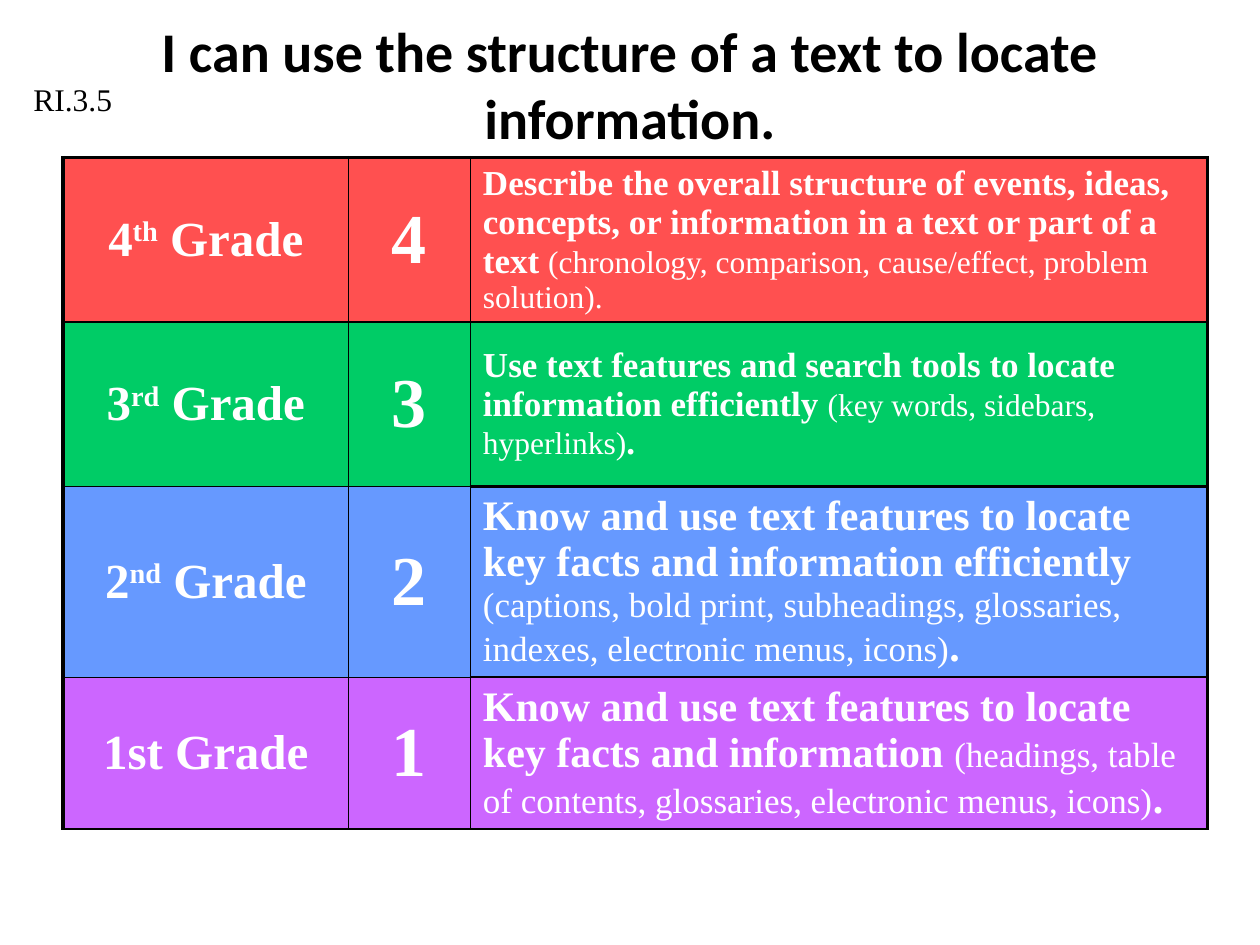
from lxml import etree
from pptx import Presentation
from pptx.dml.color import RGBColor
from pptx.enum import text
from pptx.oxml import ns
from pptx.util import Pt

COLORS = {"ink": "000000", "paper": "FFFFFF", "4th": "FF5050", "3rd": "00CC66",
          "2nd": "6699FF", "1st": "CC66FF"}
SERIF = "Times New Roman"


def add_text(paragraph, words, size, font=SERIF, color="paper", bold=False, raised=False):
    run = paragraph.add_run()
    run.text = words
    run.font.size = Pt(size)
    run.font.name = font
    run.font.bold = bold
    run.font.color.rgb = RGBColor.from_string(COLORS[color])
    if raised:
        run.font._element.set("baseline", "30000")


def set_borders(cell, widths):
    """Draw the left, right, top and bottom borders, with widths in points."""
    properties = cell._tc.get_or_add_tcPr()
    for index, (side, width) in enumerate(zip("LRTB", widths)):
        line = etree.Element(ns.qn(f"a:ln{side}"), w=str(Pt(width)))
        fill = etree.SubElement(line, ns.qn("a:solidFill"))
        etree.SubElement(fill, ns.qn("a:srgbClr"), val=COLORS["ink"])
        properties.insert(index, line)


prs = Presentation()
prs.slide_width, prs.slide_height = Pt(720), Pt(540)
slide = prs.slides.add_slide(prs.slide_layouts[5])

title = slide.shapes.title
title.left, title.top, title.width, title.height = Pt(24), Pt(12), Pt(672), Pt(72)
title.text_frame.vertical_anchor = text.MSO_ANCHOR.MIDDLE
heading = title.text_frame.paragraphs[0]
heading.alignment = text.PP_ALIGN.CENTER
add_text(heading, "I can use the structure of a text to locate information.", 32,
         font="Calibri", color="ink", bold=True)

# Grade, ordinal ending raised or not, row height, bold size, plain size, goal, examples, ending
levels = [
    ("4th", True, 94, 20, 18,
     "Describe the overall structure of events, ideas, concepts, or information in a text "
     "or part of a text ",
     "(chronology, comparison, cause/effect, problem solution).", ""),
    ("3rd", True, 94, 20, 18,
     "Use text features and search tools to locate information efficiently ",
     "(key words, sidebars, hyperlinks)", "."),
    ("2nd", True, 109, 24, 20,
     "Know and use text features to locate key facts and information efficiently ",
     "(captions, bold print, subheadings, glossaries, indexes, electronic menus, icons)", "."),
    ("1st", False, 86.5, 24, 20,
     "Know and use text features to locate key facts and information ",
     "(headings, table of contents, glossaries, electronic menus, icons)", "."),
]
column_widths = [163.2, 69.6, 421.2]
column_lines = [2.25, 1, 1, 2.25]
label_row_lines = [2.25, 1.5, 1, 1, 1.5]
goal_row_lines = [2.25, 1.5, 1.5, 1.5, 1.5]

rubric = slide.shapes.add_table(len(levels), len(column_widths), Pt(36), Pt(90),
                                Pt(sum(column_widths)),
                                Pt(sum(level[2] for level in levels))).table
rubric.first_row = rubric.horz_banding = False
for column, width in zip(rubric.columns, column_widths):
    column.width = Pt(width)

for r, (grade, raised, height, goal_size, example_size, goal, examples, ending) in enumerate(levels):
    rubric.rows[r].height = Pt(height)
    number = grade[0]
    for c, cell in enumerate(rubric.rows[r].cells):
        cell.fill.solid()
        cell.fill.fore_color.rgb = RGBColor.from_string(COLORS[grade])
        cell.vertical_anchor = text.MSO_ANCHOR.MIDDLE
        row_lines = goal_row_lines if c == 2 else label_row_lines
        set_borders(cell, column_lines[c:c + 2] + row_lines[r:r + 2])

    grade_line, number_line, goal_line = [cell.text_frame.paragraphs[0]
                                          for cell in rubric.rows[r].cells]
    grade_line.alignment = number_line.alignment = text.PP_ALIGN.CENTER
    if raised:
        add_text(grade_line, number, 28, bold=True)
        add_text(grade_line, grade[1:], 28, bold=True, raised=True)
        add_text(grade_line, " Grade", 28, bold=True)
    else:
        add_text(grade_line, f"{grade} Grade", 28, bold=True)
    add_text(number_line, number, 40, bold=True)
    add_text(goal_line, goal, goal_size, bold=True)
    add_text(goal_line, examples, example_size)
    if ending:
        add_text(goal_line, ending, goal_size, bold=True)

standard = slide.shapes.add_textbox(Pt(12), Pt(42), Pt(102), Pt(29)).text_frame
standard.word_wrap = True
standard.auto_size = text.MSO_AUTO_SIZE.SHAPE_TO_FIT_TEXT
add_text(standard.paragraphs[0], "RI.3.5", 18, color="ink")

prs.save("out.pptx")
